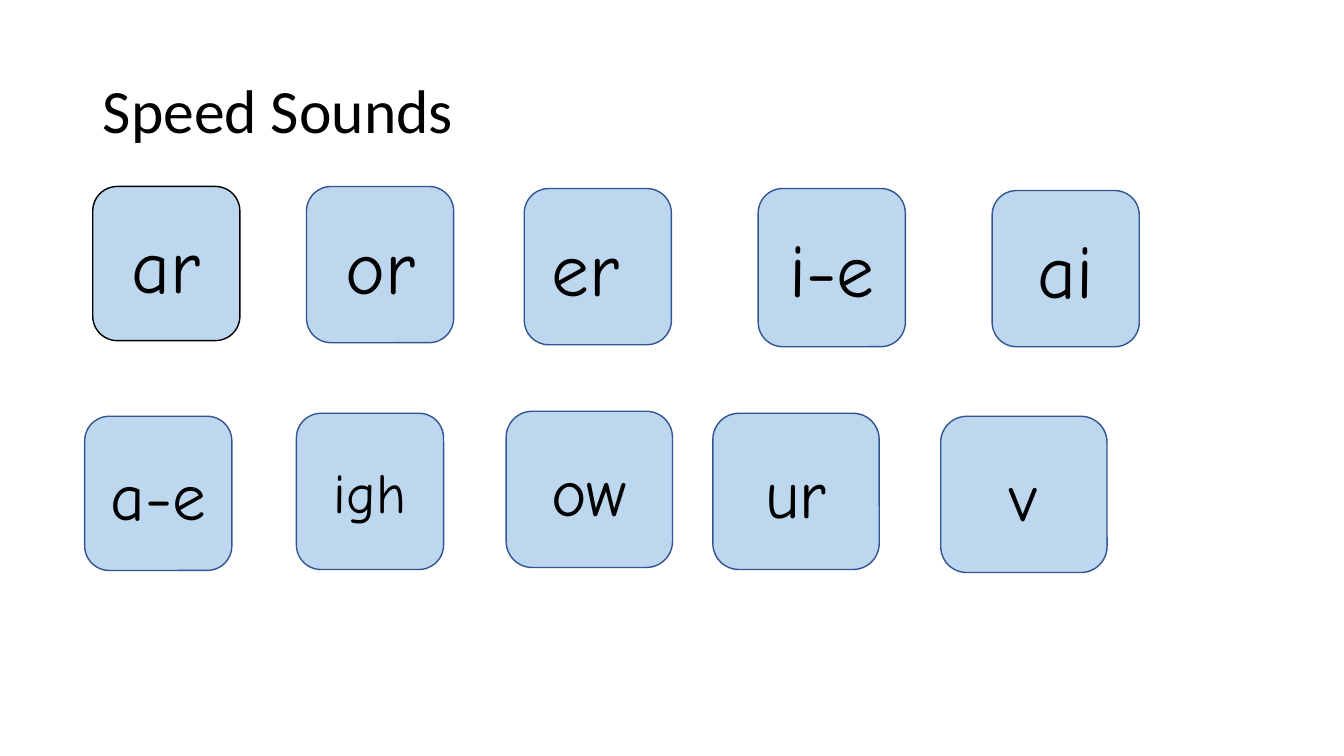
from dataclasses import dataclass

import pptx
import pptx.dml.color
import pptx.enum.shapes
import pptx.enum.text
import pptx.util

Inches = pptx.util.Inches
Align = pptx.enum.text.PP_ALIGN


@dataclass
class Card:
    sound: str
    left: float
    top: float
    width: float = 1.46
    height: float = 1.55
    size: int = 54
    edge: str = "325491"


CARDS = [
    Card("ar", 0.92, 1.85, height=1.53, edge="000000"),
    Card("or", 3.04, 1.85),
    Card("er ", 5.2, 1.87),
    Card("i-e", 7.52, 1.87, height=1.57),
    Card("a-e", 0.84, 4.13, height=1.53, size=48),
    Card("ai", 9.84, 1.89),
    Card("igh", 2.94, 4.1, size=40),
    Card("ow", 5.02, 4.08, width=1.65, size=48),
    Card("ur", 7.07, 4.1, width=1.65, size=48),
    Card("v", 9.33, 4.13, width=1.65, size=48),
]


def paint(target, color: str) -> None:
    """Set a fill or a font to a solid hex colour."""
    if hasattr(target, "solid"):
        target.solid()
        target.fore_color.rgb = pptx.dml.color.RGBColor.from_string(color)
    else:
        target.color.rgb = pptx.dml.color.RGBColor.from_string(color)


def write(shape, text: str, *, font: str, size: int, color: str = "000000",
          align=Align.CENTER, spacing: float = 1.0) -> None:
    frame = shape.text_frame
    frame.word_wrap = True
    frame.vertical_anchor = pptx.enum.text.MSO_ANCHOR.MIDDLE
    para = frame.paragraphs[0]
    para.alignment = align
    para.line_spacing = spacing
    run = para.add_run()
    run.text = text
    run.font.name = font
    run.font.size = pptx.util.Pt(size)
    paint(run.font, color)


def add_title(slide, text: str) -> None:
    title = slide.shapes.title
    title.left, title.top = Inches(0.92), Inches(0.4)
    title.width, title.height = Inches(11.5), Inches(1.45)
    write(title, text, font="Calibri", size=44, align=Align.LEFT, spacing=0.9)


def add_card(slide, card: Card) -> None:
    shape = slide.shapes.add_shape(
        pptx.enum.shapes.MSO_SHAPE.ROUNDED_RECTANGLE,
        Inches(card.left), Inches(card.top),
        Inches(card.width), Inches(card.height))
    shape.shadow.inherit = False
    paint(shape.fill, "BDD7EE")
    paint(shape.line.fill, card.edge)
    shape.line.width = pptx.util.Pt(1)
    write(shape, card.sound, font="Comic Neue", size=card.size)


def main() -> None:
    deck = pptx.Presentation()
    deck.slide_width, deck.slide_height = Inches(13.33), Inches(7.5)
    slide = deck.slides.add_slide(deck.slide_layouts.get_by_name("Title Only"))
    add_title(slide, "Speed Sounds")
    for card in CARDS:
        add_card(slide, card)
    deck.save("out.pptx")


if __name__ == "__main__":
    main()
